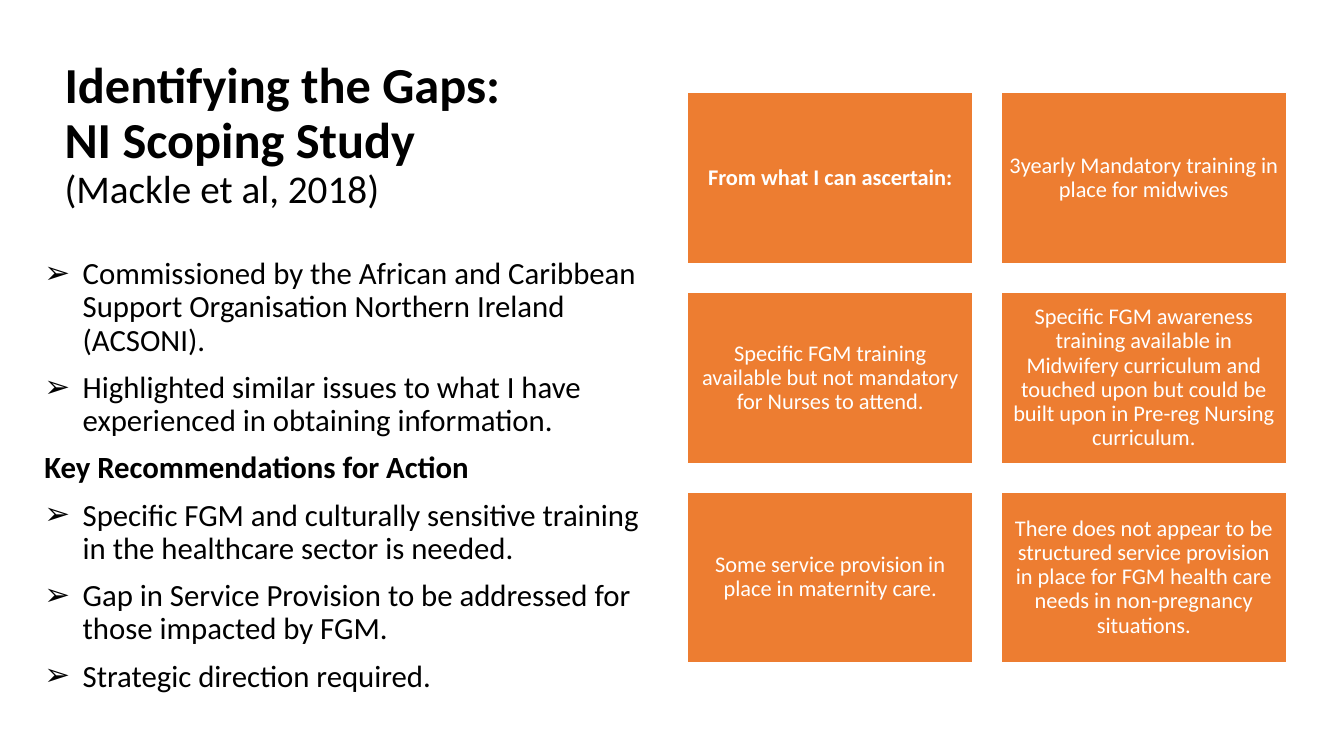
"""Build the slide on the gaps found by the NI scoping study."""
from copy import deepcopy

from lxml import etree
from pptx import Presentation
from pptx import util as u
from pptx.dml.color import RGBColor
from pptx.enum import shapes, text
from pptx.oxml.ns import qn

PX = 9144
FONT = "Calibri"
BLACK, WHITE, ORANGE = "000000", "FFFFFF", "ED7D31"
INDENT = 38

POINTS = [
    ("Commissioned by the African and Caribbean Support Organisation "
     "Northern Ireland (ACSONI).", True),
    ("Highlighted similar issues to what I have experienced in obtaining "
     "information.", True),
    ("Key Recommendations for Action", False),
    ("Specific FGM and culturally sensitive training in the healthcare "
     "sector is needed.", True),
    ("Gap in Service Provision to be addressed for those impacted by FGM.", True),
    ("Strategic direction required.", True),
]

FINDINGS = [
    "From what I can ascertain:",
    "3yearly Mandatory training in place for midwives",
    "Specific FGM training available but not mandatory for Nurses to attend.",
    "Specific FGM awareness training available in Midwifery curriculum and "
    "touched upon but could be built upon in Pre-reg Nursing curriculum.",
    "Some service provision in place in maternity care.",
    "There does not appear to be structured service provision in place for "
    "FGM health care needs in non-pregnancy situations.",
]


def px(n):
    """Turn px into EMU."""
    return u.Emu(n * PX)


def rgb(value):
    """Turn a hex string into a colour."""
    return RGBColor.from_string(value)


def place(s, x, y, w, h):
    """Move and size a shape."""
    s.left, s.top, s.width, s.height = px(x), px(y), px(w), px(h)


def write(p, content, size=16, color=BLACK, bold=False,
          align=text.PP_ALIGN.LEFT, before=0):
    """Add formatted text to a paragraph, with a line break at each newline."""
    p.alignment = align
    p.line_spacing = 0.9
    p.space_before = u.Pt(before)
    for i, line in enumerate(content.split("\n")):
        if i:
            p.add_line_break()
            p._p[-1].append(deepcopy(r._r.rPr))
        if line:
            r = p.add_run()
            r.text = line
            r.font.name = FONT
            r.font.size = u.Pt(size)
            r.font.bold = bold
            r.font.color.rgb = rgb(color)


def set_bullet(p, on):
    """Give a paragraph an arrow bullet with a hanging indent, or none."""
    pPr = p._p.get_or_add_pPr()
    indent = px(INDENT) if on else 0
    pPr.set("marL", str(indent))
    pPr.set("indent", str(-indent))
    if on:
        etree.SubElement(pPr, qn("a:buFont")).set("typeface", FONT)
        etree.SubElement(pPr, qn("a:buChar")).set("char", "➢")
    else:
        etree.SubElement(pPr, qn("a:buNone"))


def fill_title(s):
    """Fill the title placeholder."""
    place(s, 54, 42, 625, 173)
    tf = s.text_frame
    tf.auto_size = text.MSO_AUTO_SIZE.NONE
    tf.vertical_anchor = text.MSO_ANCHOR.BOTTOM
    p = tf.paragraphs[0]
    write(p, "Identifying the Gaps:\nNI Scoping Study\n", size=36, bold=True)
    write(p, "(Mackle et al, 2018)", size=28)


def fill_body(s):
    """Fill the body placeholder with the list of points."""
    place(s, 34, 251, 613, 447)
    tf = s.text_frame
    tf.auto_size = text.MSO_AUTO_SIZE.NONE
    for i, (content, bulleted) in enumerate(POINTS):
        p = tf.add_paragraph() if i else tf.paragraphs[0]
        write(p, content, size=22, bold=not bulleted, before=10)
        set_bullet(p, bulleted)


def add_box(sl, x, y, content, bold):
    """Add one orange box with centred text."""
    s = sl.shapes.add_shape(shapes.MSO_SHAPE.RECTANGLE,
                            px(x), px(y), px(283), px(170))
    s.shadow.inherit = False
    s.fill.solid()
    s.fill.fore_color.rgb = rgb(ORANGE)
    s.line.color.rgb = rgb(WHITE)
    s.line.width = u.Pt(1)
    tf = s.text_frame
    tf.word_wrap = True
    tf.vertical_anchor = text.MSO_ANCHOR.MIDDLE
    tf.margin_left = tf.margin_right = tf.margin_top = tf.margin_bottom = px(7)
    write(tf.paragraphs[0], content, color=WHITE, bold=bold,
          align=text.PP_ALIGN.CENTER)


def main():
    """Build and save the slide."""
    prs = Presentation()
    prs.slide_width, prs.slide_height = px(1333), px(750)
    sl = prs.slides.add_slide(prs.slide_layouts[1])
    fill_title(sl.shapes.title)
    fill_body(sl.placeholders[1])
    for i, content in enumerate(FINDINGS):
        row, col = divmod(i, 2)
        add_box(sl, 682 + 311 * col, 92 + 198 * row, content, bold=i == 0)
    prs.save("out.pptx")


if __name__ == "__main__":
    main()
